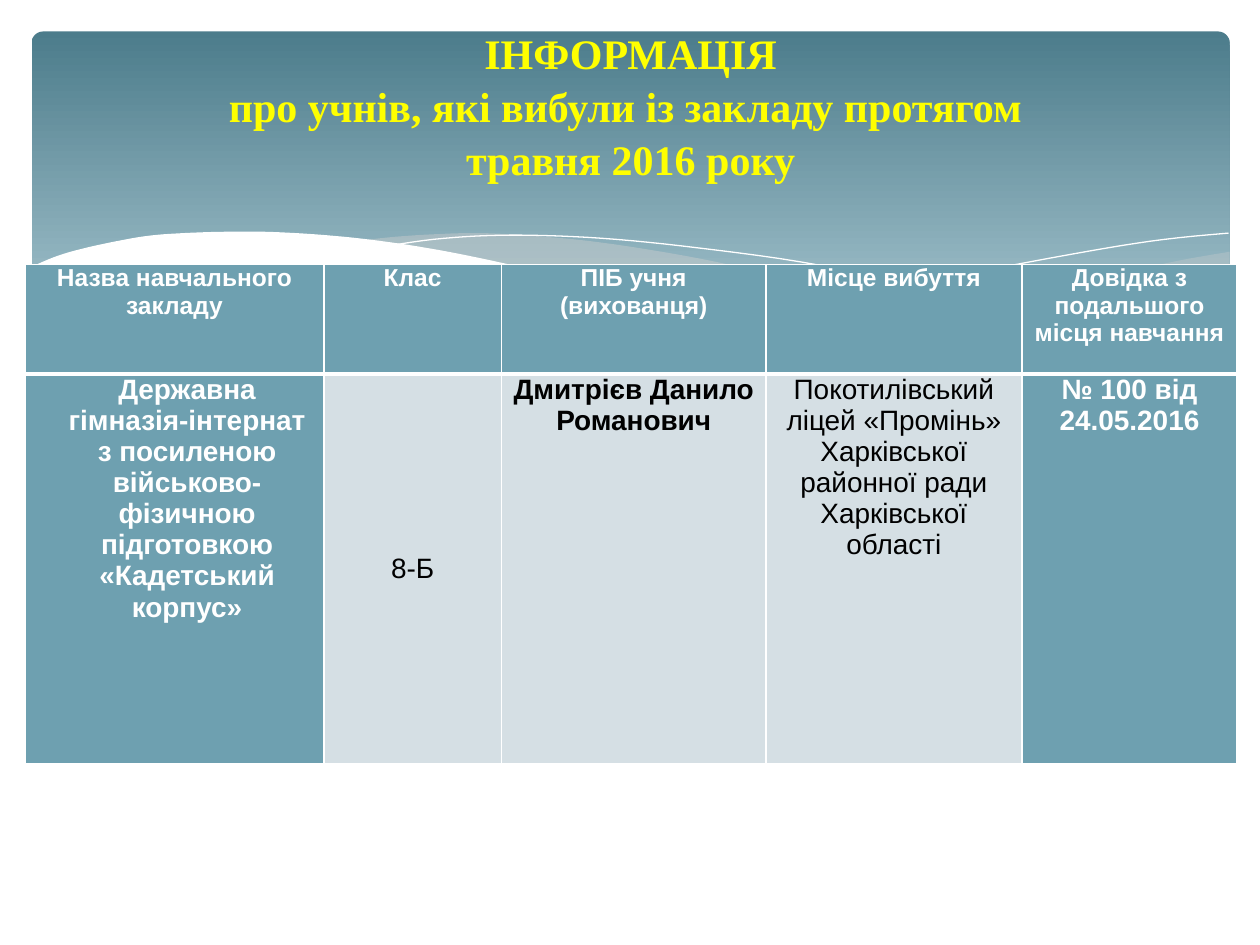
from dataclasses import dataclass
from typing import Optional

from lxml import etree
from pptx import Presentation
from pptx.dml.color import RGBColor
from pptx.enum.shapes import MSO_SHAPE
from pptx.enum.text import MSO_ANCHOR, PP_ALIGN
from pptx.oxml.ns import qn
from pptx.util import Emu, Pt

ROUNDED = MSO_SHAPE.ROUNDED_RECTANGLE
TOP, MIDDLE, BOTTOM = MSO_ANCHOR.TOP, MSO_ANCHOR.MIDDLE, MSO_ANCHOR.BOTTOM
CENTER = PP_ALIGN.CENTER

EMU_PER_PX = 9144  # 100 px to the inch
WHITE, BLACK, YELLOW = "FFFFFF", "000000", "FFFF00"
TEAL, PALE, MIST = "6EA0B0", "D5DFE4", "D4D2D0"

Points = list[tuple[int, int]]


@dataclass
class Wave:
    curves: list[Points]  # each one smoothed, then joined into one outline
    fill: Optional[str] = None
    opacity: int = 100


@dataclass
class Entry:
    text: str
    fill: str = TEAL
    color: str = WHITE
    size: int = 16
    bold: bool = True
    anchor: MSO_ANCHOR = TOP
    indent: int = 0


WAVES = [
    Wave([[(975, 200), (935, 207), (876, 220), (805, 237), (729, 253), (661, 265)],
          [(661, 265), (719, 272), (769, 277), (814, 278), (863, 275), (905, 269),
           (942, 259), (976, 247)],
          [(976, 247), (976, 200)]], MIST, 29),
    Wave([[(893, 273), (807, 260), (706, 240), (629, 222), (569, 208), (514, 198),
           (465, 191), (420, 187), (380, 185), (344, 186), (313, 188), (286, 191)],
          [(286, 191), (342, 199), (404, 211), (449, 222), (530, 240), (601, 255),
           (665, 266), (722, 274), (773, 277), (818, 278), (857, 277), (893, 273)]],
         MIST, 40),
    Wave([[(309, 195), (344, 190), (387, 187), (433, 187), (489, 190), (556, 197),
           (636, 208), (727, 226), (831, 251), (907, 272)]]),
    Wave([[(613, 257), (695, 235), (776, 216), (866, 199), (924, 190), (975, 185)]]),
    Wave([[(977, 246), (930, 262), (875, 273), (809, 277), (744, 274), (668, 265),
           (579, 250), (503, 233), (447, 220), (391, 207), (340, 197), (292, 190),
           (250, 186), (211, 184), (177, 184), (146, 185), (119, 187), (95, 191),
           (67, 197), (46, 203), (29, 210), (23, 213)],
          [(23, 213), (23, 329)], [(23, 329), (977, 329)]], WHITE),
]

COLUMNS = [237, 141, 210, 203, 171]
ROWS = [87, 309]
HEADINGS = ["Назва навчального закладу", "Клас", "ПІБ учня (вихованця)",
            "Місце вибуття", "Довідка з подальшого місця навчання"]
ENTRIES = [
    [Entry(heading, size=14) for heading in HEADINGS],
    [Entry("Державна гімназія-інтернат з посиленою військово-фізичною "
           "підготовкою «Кадетський корпус»", indent=20),
     Entry("8-Б", PALE, BLACK, bold=False, anchor=MIDDLE),
     Entry("Дмитрієв Данило Романович", PALE, BLACK),
     Entry("Покотилівський ліцей «Промінь» Харківської районної ради "
           "Харківської області", PALE, BLACK, bold=False),
     Entry("№ 100 від 24.05.2016")],
]
TITLE = "ІНФОРМАЦІЯ\vпро учнів, які вибули із закладу протягом \vтравня 2016 року"


def px(length: float) -> Emu:
    return Emu(round(length * EMU_PER_PX))


def rgb(color: str) -> RGBColor:
    return RGBColor.from_string(color)


def apply(target, formats: dict) -> None:
    for name, value in formats.items():
        setattr(target, name, value)


def write(para, text: str, font: str, size: int, color: str, bold: bool) -> None:
    para.text = text
    para.alignment = CENTER
    for span in para.runs:
        apply(span.font, {"name": font, "size": Pt(size), "bold": bold})
        span.font.color.rgb = rgb(color)


def smooth(knots: Points, steps: int = 5) -> list[tuple[float, float]]:
    """Catmull-Rom curve through the knots; two knots stay a straight line."""
    if len(knots) == 2:
        return list(knots)
    ends = [knots[0], *knots, knots[-1]]
    curve = [knots[0]]
    for a, b, c, d in zip(ends, ends[1:], ends[2:], ends[3:]):
        for step in range(1, steps + 1):
            t = step / steps
            curve.append(tuple(
                (2 * q + (r - p) * t + (2 * p - 5 * q + 4 * r - s) * t ** 2
                 + (3 * q - p - 3 * r + s) * t ** 3) / 2
                for p, q, r, s in zip(a, b, c, d)))
    return curve


def draw_panel(page) -> None:
    panel = page.shapes.add_shape(ROUNDED, px(25), px(25), px(951), px(270))
    panel.adjustments[0] = 0.034
    panel.shadow.inherit = False
    panel.line.fill.background()
    panel.fill.gradient()
    panel.fill.gradient_angle = 270
    stops = zip(panel.fill.gradient_stops, [("4C7C8B", 0), ("A8C6D0", 0.9)])
    for stop, (color, position) in stops:
        stop.color.rgb = rgb(color)
        stop.position = position


def draw_wave(page, wave: Wave) -> None:
    points = [(px(x), px(y)) for knots in wave.curves for x, y in smooth(knots)]
    builder = page.shapes.build_freeform(*points[0], scale=1.0)
    builder.add_line_segments(points[1:], close=wave.fill is not None)
    shape = builder.convert_to_shape()
    shape.shadow.inherit = False
    if wave.fill is None:
        shape.fill.background()
        shape.line.color.rgb = rgb(WHITE)
        shape.line.width = Pt(0)
        return
    shape.line.fill.background()
    shape.fill.solid()
    shape.fill.fore_color.rgb = rgb(wave.fill)
    if wave.opacity < 100:
        color = shape.fill._xPr.find(f"{qn('a:solidFill')}/{qn('a:srgbClr')}")
        etree.SubElement(color, qn("a:alpha"), val=str(wave.opacity * 1000))


def add_borders(cell, widths: dict[str, int]) -> None:
    properties = cell._tc.get_or_add_tcPr()
    for side, width in widths.items():
        line = etree.SubElement(properties, qn(f"a:ln{side}"), w=str(Pt(width)))
        fill = etree.SubElement(line, qn("a:solidFill"))
        etree.SubElement(fill, qn("a:srgbClr"), val=WHITE)


def fill_cell(cell, entry: Entry, borders: dict[str, int]) -> None:
    apply(cell, {"margin_left": px(7), "margin_right": px(7), "margin_top": 0,
                 "margin_bottom": 0, "vertical_anchor": entry.anchor})
    add_borders(cell, borders)
    cell.fill.solid()
    cell.fill.fore_color.rgb = rgb(entry.fill)
    para = cell.text_frame.paragraphs[0]
    write(para, entry.text, "Arial", entry.size, entry.color, entry.bold)
    if entry.indent:
        apply_indent = para._p.get_or_add_pPr()
        apply_indent.set("marL", str(px(entry.indent)))
        apply_indent.set("indent", "0")


def draw_table(page) -> None:
    table = page.shapes.add_table(len(ROWS), len(COLUMNS), px(20), px(210),
                                  px(sum(COLUMNS)), px(sum(ROWS))).table
    for column, width in zip(table.columns, COLUMNS):
        column.width = px(width)
    for index, height in enumerate(ROWS):
        table.rows[index].height = px(height)
        borders = {"L": 1, "R": 1, "T": 3 if index else 1, "B": 1 if index else 3}
        for cell, entry in zip(table.rows[index].cells, ENTRIES[index]):
            fill_cell(cell, entry, borders)


def draw_title(page) -> None:
    box = page.shapes.add_textbox(px(28), px(37), px(945), px(133))
    apply(box.text_frame, {"word_wrap": True, "vertical_anchor": BOTTOM,
                           "margin_top": 0, "margin_bottom": px(24)})
    para = box.text_frame.paragraphs[0]
    para.line_spacing = 1.05
    write(para, TITLE, "Times New Roman", 24, YELLOW, True)


def main() -> None:
    deck = Presentation()
    apply(deck, {"slide_width": px(1000), "slide_height": px(750)})
    page = deck.slides.add_slide(deck.slide_layouts[6])
    # Header panel with waves
    draw_panel(page)
    for wave in WAVES:
        draw_wave(page, wave)
    # Content
    draw_table(page)
    draw_title(page)
    deck.save("out.pptx")


if __name__ == "__main__":
    main()
